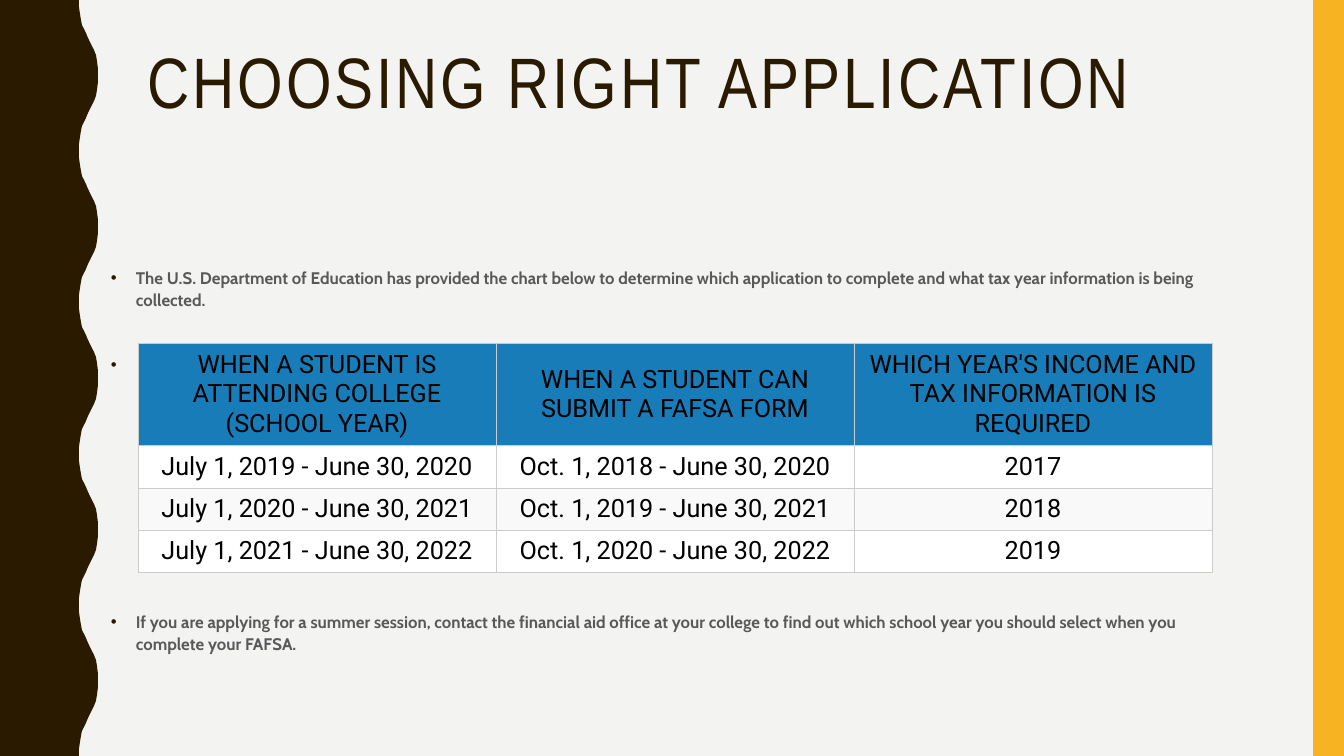
from lxml.etree import SubElement
from pptx import Presentation
from pptx.dml.color import RGBColor
from pptx.enum.shapes import MSO_SHAPE
from pptx.enum.text import MSO_ANCHOR, PP_ALIGN
from pptx.oxml.ns import qn
from pptx.util import Emu, Pt

EMU_PER_PX = 914400 / 100.8
WIDTH, HEIGHT = 1344, 756

BROWN = "2A1A00"
GREY = "595959"
BLUE = "187CB8"
BORDER = "CCCCCC"

# Half a wave of the left edge: (rightward offset, downward offset)
HALF_WAVE = [(0, 0), (0, 7), (1, 14), (2, 20), (3, 25), (5, 29), (7, 33),
             (9, 38), (11, 42), (13, 46), (15, 50), (17, 55), (18, 61),
             (19, 69), (19, 76)]
WAVE_COUNT = 5
WAVE_LEFT = 79

NOTES = [
    ("The U.S. Department of Education has provided the chart below to determine "
     "which application to complete and what tax year information is being collected.", 0),
    (" ", 30),
    ("If you are applying for a summer session, contact the financial aid office at "
     "your college to find out which school year you should select when you complete "
     "your FAFSA.", 168),
]

SCHOOL_YEARS = [
    ("WHEN A STUDENT IS ATTENDING COLLEGE (SCHOOL YEAR)",
     "WHEN A STUDENT CAN SUBMIT A FAFSA FORM",
     "WHICH YEAR'S INCOME AND TAX INFORMATION IS REQUIRED"),
    ("July 1, 2019 - June 30, 2020", "Oct. 1, 2018 - June 30, 2020", "2017"),
    ("July 1, 2020 - June 30, 2021", "Oct. 1, 2019 - June 30, 2021", "2018"),
    ("July 1, 2021 - June 30, 2022", "Oct. 1, 2020 - June 30, 2022", "2019"),
]
ROW_FILLS = [BLUE, "FFFFFF", "F9F9F9", "FFFFFF"]
ROW_HEIGHTS = [100, 42, 42, 42]
COLUMN_WIDTH = 358


def px(length):
    return Emu(round(length * EMU_PER_PX))


def paint(fill, color):
    fill.solid()
    fill.fore_color.rgb = RGBColor.from_string(color)


def style_shape(shape, color):
    shape.shadow.inherit = False
    paint(shape.fill, color)
    shape.line.fill.background()


def write(paragraph, text, font, size, color, bold=False, align=PP_ALIGN.LEFT,
          line_spacing=1.0, space_before=0, tracking=0):
    paragraph.alignment = align
    paragraph.line_spacing = line_spacing
    paragraph.space_before = Pt(space_before)
    run = paragraph.add_run()
    run.text = text
    run.font.name = font
    run.font.size = Pt(size)
    run.font.bold = bold
    run.font.color.rgb = RGBColor.from_string(color)
    if tracking:
        run.font._element.set("spc", str(tracking * 100))


def add_bullet(paragraph, color, indent):
    props = paragraph._p.get_or_add_pPr()
    props.set("marL", str(px(indent)))
    props.set("indent", str(-px(indent)))
    bullet_color = SubElement(props, qn("a:buClr"))
    SubElement(bullet_color, qn("a:srgbClr"), val=color)
    SubElement(props, qn("a:buFont"), typeface="Arial")
    SubElement(props, qn("a:buChar"), char="•")


def add_text_frame(slide, left, top, width, height):
    frame = slide.shapes.add_textbox(px(left), px(top), px(width), px(height)).text_frame
    frame.word_wrap = True
    return frame


def add_wavy_edge(slide):
    period = HEIGHT / WAVE_COUNT
    rising = HALF_WAVE
    falling = [(x, period - y) for x, y in reversed(HALF_WAVE)]
    outline = [(WAVE_LEFT + x, wave * period + y)
               for wave in range(WAVE_COUNT) for x, y in rising + falling]
    builder = slide.shapes.build_freeform(0, 0, scale=EMU_PER_PX)
    builder.add_line_segments(outline + [(0, HEIGHT)], close=True)
    style_shape(builder.convert_to_shape(), BROWN)


def add_side_band(slide):
    band = slide.shapes.add_shape(MSO_SHAPE.RECTANGLE, px(1313), 0, px(31), px(HEIGHT))
    style_shape(band, "F8B323")


def add_cell_borders(cell, color, width):
    props = cell._tc.get_or_add_tcPr()
    for side in ("lnL", "lnR", "lnT", "lnB"):
        line = SubElement(props, qn(f"a:{side}"), w=str(Pt(width)))
        line_fill = SubElement(line, qn("a:solidFill"))
        SubElement(line_fill, qn("a:srgbClr"), val=color)


def add_year_table(slide, left, top):
    columns = len(SCHOOL_YEARS[0])
    table = slide.shapes.add_table(
        len(SCHOOL_YEARS), columns, px(left), px(top),
        px(COLUMN_WIDTH * columns), px(sum(ROW_HEIGHTS))).table
    table.first_row = table.horz_banding = False
    for column in table.columns:
        column.width = px(COLUMN_WIDTH)
    for row, height, fill, texts in zip(table.rows, ROW_HEIGHTS, ROW_FILLS, SCHOOL_YEARS):
        row.height = px(height)
        for cell, text in zip(row.cells, texts):
            cell.margin_left = cell.margin_right = px(6)
            cell.margin_top = cell.margin_bottom = px(6)
            cell.vertical_anchor = MSO_ANCHOR.MIDDLE
            add_cell_borders(cell, BORDER, 0.75)
            paint(cell.fill, fill)
            write(cell.text_frame.paragraphs[0], text, "Roboto", 18, "000000",
                  align=PP_ALIGN.CENTER)


def add_notes(slide):
    frame = add_text_frame(slide, 101, 261, 1142, 377)
    for index, (text, gap) in enumerate(NOTES):
        paragraph = frame.add_paragraph() if index else frame.paragraphs[0]
        write(paragraph, text, "Cabin", 12, GREY, bold=True,
              line_spacing=1.1, space_before=gap)
        add_bullet(paragraph, BROWN, 25)


def main():
    deck = Presentation()
    deck.slide_width, deck.slide_height = px(WIDTH), px(HEIGHT)
    slide = deck.slides.add_slide(deck.slide_layouts[6])

    # Background and side decoration
    paint(slide.background.fill, "F3F3F2")
    add_wavy_edge(slide)
    add_side_band(slide)

    # Title
    title = add_text_frame(slide, 138, 42, 1122, 164)
    write(title.paragraphs[0], "CHOOSING RIGHT APPLICATION", "Arial Narrow", 51, BROWN,
          line_spacing=0.9, tracking=2)

    # Notes around the table of school years
    add_notes(slide)
    add_year_table(slide, 138, 343)

    deck.save("out.pptx")


if __name__ == "__main__":
    main()
